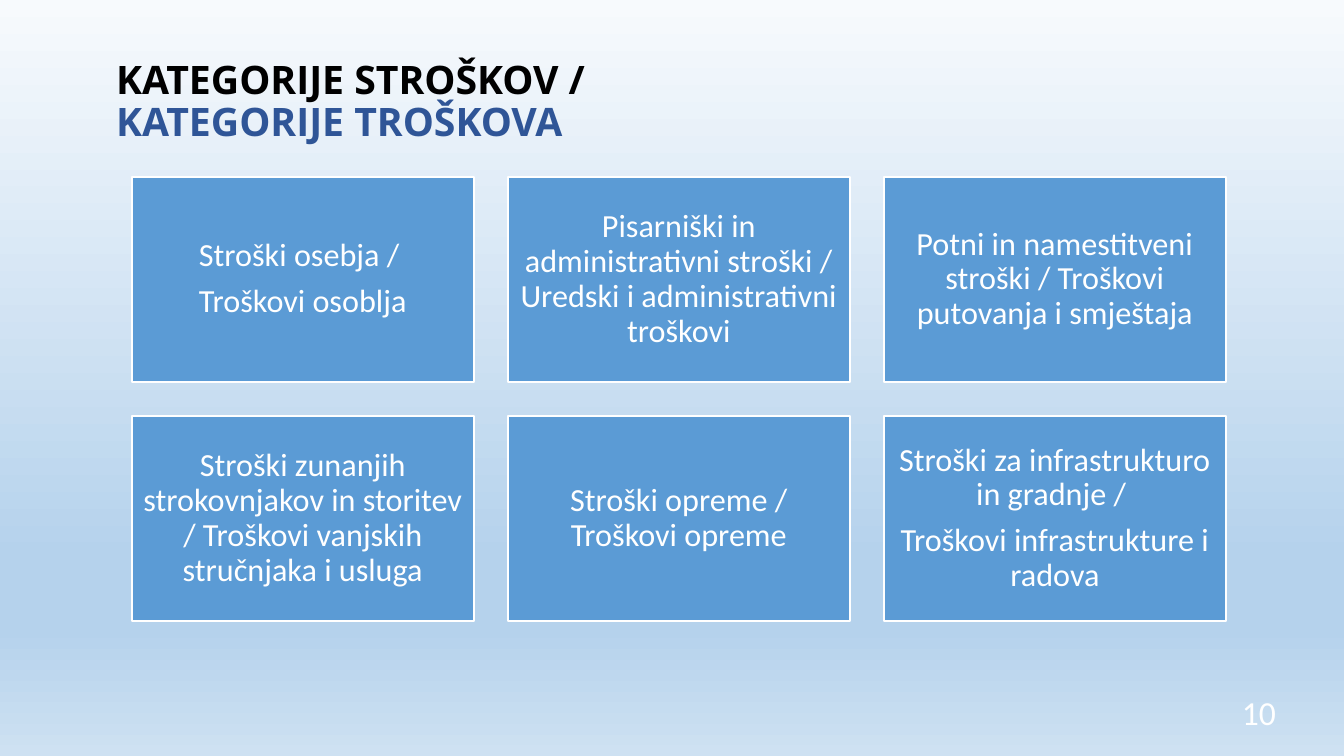
from dataclasses import dataclass

from lxml import etree
from pptx import Presentation
from pptx import util as u
from pptx.dml.color import RGBColor
from pptx.enum import shapes, text
from pptx.oxml.ns import qn


@dataclass(frozen=True)
class Theme:
    heading_font: str = "Open Sans"
    body_font: str = "Calibri"
    heading_size: int = 28
    card_size: int = 23
    number_size: int = 24
    black: str = "000000"
    blue: str = "2F5597"
    card: str = "5B9BD5"
    white: str = "FFFFFF"
    sky: tuple = ((0, "F7FAFD"), (74, "B5D2EC"), (83, "B5D2EC"), (100, "CEE1F2"))


THEME = Theme()
SLIDE_WIDTH, SLIDE_HEIGHT = 1344, 756
CATEGORIES = [
    "Stroški osebja / \nTroškovi osoblja",
    "Pisarniški in administrativni stroški / Uredski i administrativni troškovi",
    "Potni in namestitveni stroški / Troškovi putovanja i smještaja",
    "Stroški zunanjih strokovnjakov in storitev / Troškovi vanjskih stručnjaka i usluga",
    "Stroški opreme / Troškovi opreme",
    "Stroški za infrastrukturo in gradnje / \nTroškovi infrastrukture i radova",
]


def px(length):
    return u.Emu(round(length * 914400 / 100.8))


def style_paragraph(paragraph, font, size, color, align, bold=False):
    paragraph.alignment = align
    paragraph.line_spacing = 0.9
    for run in paragraph.runs:
        run.font.name = font
        run.font.size = u.Pt(size)
        run.font.bold = bold
        run.font.color.rgb = RGBColor.from_string(color)


def set_margins(frame, left, top, right, bottom):
    frame.margin_left, frame.margin_top = px(left), px(top)
    frame.margin_right, frame.margin_bottom = px(right), px(bottom)


def paint_background(slide):
    fill = slide.background.fill
    fill.gradient()
    fill.gradient_angle = 270
    stops = next(slide.element.iter(qn("a:gsLst")))
    for stop in list(stops):
        stops.remove(stop)
    for percent, color in THEME.sky:
        stop = etree.SubElement(stops, qn("a:gs"), pos=str(percent * 1000))
        etree.SubElement(stop, qn("a:srgbClr"), val=color)


def add_heading(slide, left, top, width, height):
    heading = slide.shapes.title
    heading.left, heading.top = px(left), px(top)
    heading.width, heading.height = px(width), px(height)
    frame = heading.text_frame
    frame.text = "KATEGORIJE STROŠKOV /\nKATEGORIJE TROŠKOVA"
    frame.word_wrap = True
    frame.auto_size = text.MSO_AUTO_SIZE.NONE
    frame.vertical_anchor = text.MSO_ANCHOR.MIDDLE
    for language, color in zip(frame.paragraphs, (THEME.black, THEME.blue)):
        style_paragraph(language, THEME.heading_font, THEME.heading_size, color,
                        text.PP_ALIGN.LEFT, bold=True)


def add_category(slide, category, left, top, width, height):
    card = slide.shapes.add_shape(shapes.MSO_SHAPE.RECTANGLE,
                                  px(left), px(top), px(width), px(height))
    card.shadow.inherit = False
    card.fill.solid()
    card.fill.fore_color.rgb = RGBColor.from_string(THEME.card)
    card.line.color.rgb = RGBColor.from_string(THEME.white)
    card.line.width = u.Pt(1)
    frame = card.text_frame
    frame.text = category
    frame.word_wrap = True
    frame.vertical_anchor = text.MSO_ANCHOR.MIDDLE
    set_margins(frame, 10, 10, 10, 10)
    for paragraph in frame.paragraphs:
        style_paragraph(paragraph, THEME.body_font, THEME.card_size, THEME.white,
                        text.PP_ALIGN.CENTER)
        paragraph.space_after = u.Pt(8)


def add_category_grid(slide, left, top, width, height, columns=3, rows=2, gap=34):
    card_width = (width - gap * (columns - 1)) / columns
    card_height = (height - gap * (rows - 1)) / rows
    for index, category in enumerate(CATEGORIES):
        row, column = divmod(index, columns)
        add_category(slide, category,
                     left + column * (card_width + gap),
                     top + row * (card_height + gap),
                     card_width, card_height)


def add_page_number(slide, left, top, width, height):
    number = slide.shapes.add_textbox(px(left), px(top), px(width), px(height))
    frame = number.text_frame
    frame.text = "10"
    frame.word_wrap = True
    set_margins(frame, 8, 0, 20, 0)
    paragraph = frame.paragraphs[0]
    style_paragraph(paragraph, THEME.body_font, THEME.number_size, THEME.white,
                    text.PP_ALIGN.RIGHT)
    paragraph.line_spacing = 1.0


def main():
    deck = Presentation()
    deck.slide_width, deck.slide_height = px(SLIDE_WIDTH), px(SLIDE_HEIGHT)
    slide = deck.slides.add_slide(deck.slide_layouts.get_by_name("Title Only"))
    paint_background(slide)
    add_heading(slide, 106, 30, 1159, 146)
    add_category_grid(slide, 132, 177, 1094, 444)
    add_page_number(slide, 1225, 692, 71, 40)
    deck.save("out.pptx")


if __name__ == "__main__":
    main()
